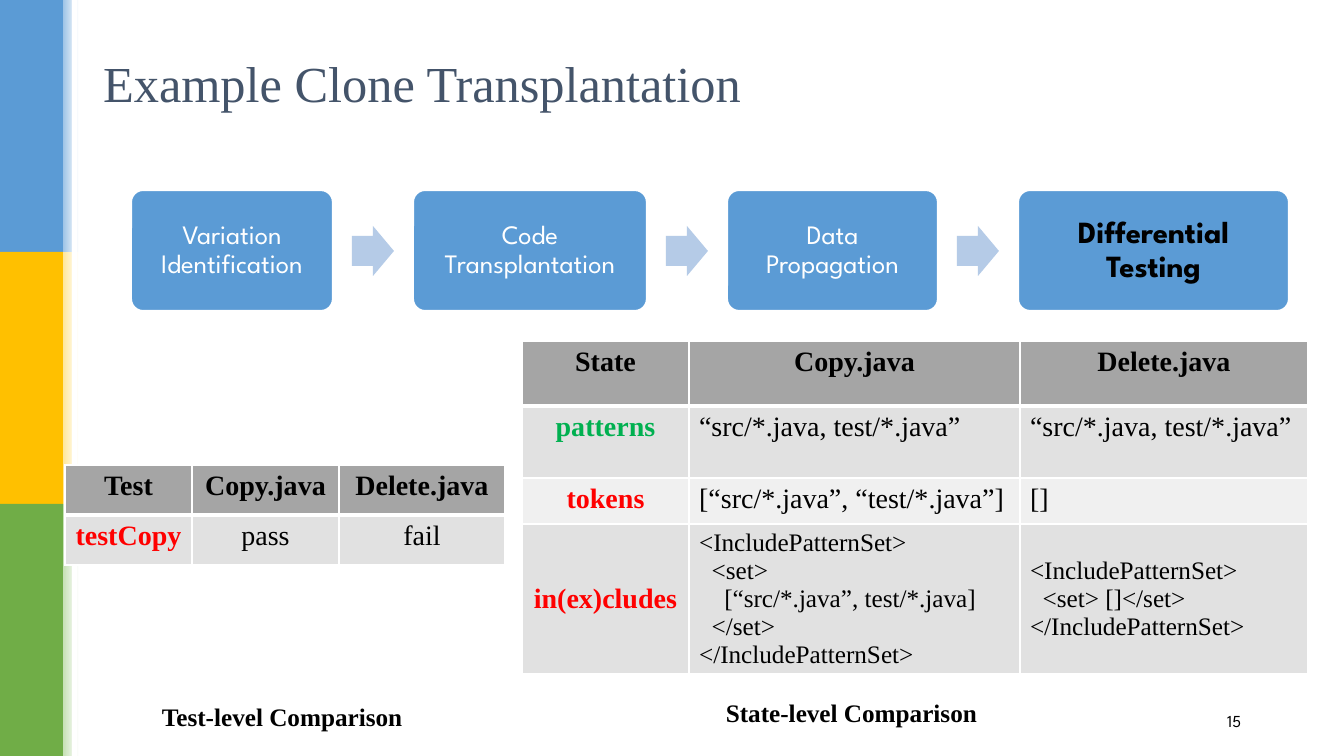
from lxml.etree import SubElement
from pptx import Presentation
from pptx.dml.color import RGBColor
from pptx.enum.shapes import MSO_SHAPE
from pptx.enum.text import MSO_ANCHOR, MSO_AUTO_SIZE, PP_ALIGN
from pptx.oxml import parse_xml
from pptx.oxml.ns import nsdecls
from pptx.util import Emu, Pt

EMU_PER_PX = 12192000 / 1344
SERIF, SANS = "Times New Roman", "League Spartan"
BLACK, WHITE, BLUE, RED = "000000", "FFFFFF", "5B9BD5", "FF0000"


def px(*lengths):
    return [Emu(round(length * EMU_PER_PX)) for length in lengths]


def style(frame, font_name, size, color, bold=False, align=PP_ALIGN.LEFT, spacing=None):
    for paragraph in frame.paragraphs:
        paragraph.alignment = align
        paragraph.line_spacing = spacing
        font = paragraph.font
        font.name, font.size, font.bold = font_name, Pt(size), bold
        font.color.rgb = RGBColor.from_string(color)


deck = Presentation()
deck.slide_width, deck.slide_height = px(1344, 756)
slide = deck.slides.add_slide(deck.slide_layouts[5])
shapes = slide.shapes

for band, (color, tint) in enumerate([(BLUE, "9DC3E6"), ("FFC000", "FFE699"), ("70AD47", "C5E0B4")]):
    stripe = shapes.add_shape(MSO_SHAPE.RECTANGLE, *px(0, band * 252, 63, 252))
    stripe.fill.solid()
    stripe.fill.fore_color.rgb = RGBColor.from_string(color)
    fade = shapes.add_shape(MSO_SHAPE.RECTANGLE, *px(63, band * 252, 16, 252))
    fade.fill.gradient()
    fade.fill.gradient_angle = 0
    for stop, stop_color in zip(fade.fill.gradient_stops, (tint, WHITE)):
        stop.color.rgb = RGBColor.from_string(stop_color)
    for part in (stripe, fade):
        part.line.fill.background()
        part.shadow.inherit = False

gap_strip = shapes.add_shape(MSO_SHAPE.RECTANGLE, *px(72, 0, 5, 756))
gap_strip.fill.solid()
gap_strip.fill.fore_color.rgb = RGBColor.from_string(WHITE)
gap_strip.line.fill.background()
gap_strip.shadow.inherit = False

title = shapes.title
title.left, title.top, title.width, title.height = px(93, 13, 1159, 146)
title.text_frame.text = "Example Clone Transplantation"
title.text_frame.vertical_anchor = MSO_ANCHOR.MIDDLE
style(title.text_frame, SERIF, 36, "44546A", spacing=0.9)

steps = [
    ("Variation Identification", 202, 19, WHITE, False),
    ("Code Transplantation", 234, 19, WHITE, False),
    ("Data Propagation", 211, 19, WHITE, False),
    ("Differential Testing", 271, 22, BLACK, True),
]
step_left = 131
for number, (label, width, size, color, bold) in enumerate(steps):
    if number:
        arrow = shapes.add_shape(MSO_SHAPE.RIGHT_ARROW, *px(step_left - 61, 226, 42, 50))
        arrow.adjustments[0], arrow.adjustments[1] = 0.6, 0.5
        arrow.fill.solid()
        arrow.fill.fore_color.rgb = RGBColor.from_string("B5CBE7")
        arrow.line.fill.background()
        arrow.shadow.inherit = False
    step = shapes.add_shape(MSO_SHAPE.ROUNDED_RECTANGLE, *px(step_left, 190, width, 121))
    step.adjustments[0] = 0.1
    step.fill.solid()
    step.fill.fore_color.rgb = RGBColor.from_string(BLUE)
    step.line.color.rgb = RGBColor.from_string(WHITE)
    step.line.width = Pt(1.5)
    step.shadow.inherit = False
    frame = step.text_frame
    frame.text = label
    frame.word_wrap = True
    frame.vertical_anchor = MSO_ANCHOR.MIDDLE
    frame.margin_left, frame.margin_top, frame.margin_right, frame.margin_bottom = px(11, 11, 11, 11)
    style(frame, SANS, size, color, bold, PP_ALIGN.CENTER, 0.9)
    step_left += width + 80

test_rows = [
    ["Test", "Copy.java", "Delete.java"],
    ["testCopy", "pass", "fail"],
]
state_rows = [
    ["State", "Copy.java", "Delete.java"],
    ["patterns", "“src/*.java, test/*.java”", "“src/*.java, test/*.java”"],
    ["tokens", "[“src/*.java”, “test/*.java”]", "[]"],
    [
        "in(ex)cludes",
        "<IncludePatternSet>\n  <set>\n    [“src/*.java”, test/*.java]\n  </set>\n</IncludePatternSet>",
        "<IncludePatternSet>\n  <set> []</set>\n</IncludePatternSet>",
    ],
]
comparisons = [
    (65, 465, [127, 147, 166], [50, 50], test_rows, PP_ALIGN.CENTER),
    (522, 341, [167, 331, 288], [65, 72, 46, 150], state_rows, PP_ALIGN.LEFT),
]
row_fills = ["A5A5A5", "E1E1E1", "F0F0F0", "E1E1E1"]
for left, top, widths, heights, rows, body_align in comparisons:
    table = shapes.add_table(
        len(rows), len(widths), *px(left, top, sum(widths), sum(heights))
    ).table
    for column, width in zip(table.columns, px(*widths)):
        column.width = width
    for r, (height, values) in enumerate(zip(px(*heights), rows)):
        table.rows[r].height = height
        for c, value in enumerate(values):
            cell = table.cell(r, c)
            cell.text = value
            cell.fill.solid()
            cell.fill.fore_color.rgb = RGBColor.from_string(row_fills[r])
            heading = r == 0 or c == 0
            color = BLACK if r == 0 or c else "00B050" if value == "patterns" else RED
            size = 18 if r == 3 and c else 20
            align = PP_ALIGN.CENTER if heading else body_align
            style(cell.text_frame, SERIF, size, color, heading, align)
            if r == 3 and c != 1:
                cell.vertical_anchor = MSO_ANCHOR.MIDDLE
            borders = {"lnL": 1, "lnR": 1, "lnT": 3 if r == 1 else 1, "lnB": 3 if r == 0 else 1}
            for position, (side, points) in enumerate(borders.items()):
                border = parse_xml(
                    f'<a:{side} {nsdecls("a")} w="{Pt(points)}"><a:solidFill>'
                    f'<a:srgbClr val="{WHITE}"/></a:solidFill></a:{side}>'
                )
                cell._tc.get_or_add_tcPr().insert(position, border)

captions = [
    ("Test-level Comparison", 152, 696, 263),
    ("State-level Comparison", 716, 692, 274),
]
for wording, left, top, width in captions:
    caption = shapes.add_textbox(*px(left, top, width, 40)).text_frame
    caption.text = wording
    caption.word_wrap = False
    caption.auto_size = MSO_AUTO_SIZE.SHAPE_TO_FIT_TEXT
    style(caption, SERIF, 18, BLACK, True)

page_number = shapes.add_textbox(*px(890, 701, 361, 40)).text_frame
page_number.text = "15"
page_number.word_wrap = True
page_number.vertical_anchor = MSO_ANCHOR.MIDDLE
style(page_number, SANS, 12, BLACK, align=PP_ALIGN.RIGHT)

deck.save("out.pptx")
